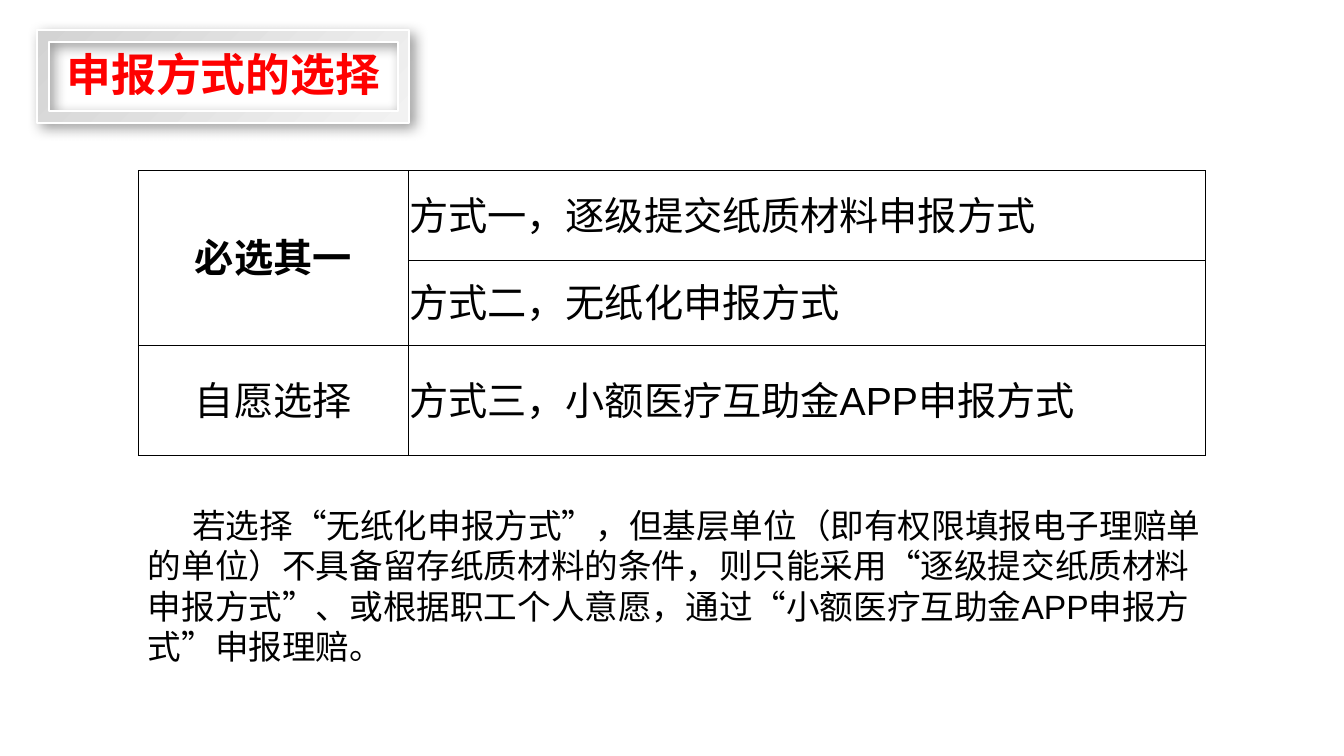
"""Build the slide on choosing a way to file a claim."""
from dataclasses import dataclass

from lxml.etree import SubElement
from pptx import Presentation
from pptx.dml.color import RGBColor
from pptx.enum.shapes import MSO_SHAPE as Shape
from pptx.enum.text import MSO_ANCHOR as Anchor, PP_ALIGN as Align
from pptx.oxml.ns import qn
from pptx.util import Pt

BLACK = RGBColor(0x00, 0x00, 0x00)
RED = RGBColor(0xFF, 0x00, 0x00)
WHITE = RGBColor(0xFF, 0xFF, 0xFF)
GREY = RGBColor(0xD3, 0xD3, 0xD3)
PALE = RGBColor(0xF2, 0xF2, 0xF2)
LATIN, CHINESE = "Arial", "Noto Sans CJK SC"
COLUMN_WIDTHS = (192.8, 569.6)
ROW_HEIGHTS = (64.2, 60.8, 78.8)
ADVICE = (
    "若选择“无纸化申报方式”，但基层单位（即有权限填报电子理赔单的单位）"
    "不具备留存纸质材料的条件，则只能采用“逐级提交纸质材料申报方式”、"
    "或根据职工个人意愿，通过“小额医疗互助金APP申报方式”申报理赔。"
)


@dataclass
class Entry:
    row: int
    column: int
    text: str
    bold: bool = False


ENTRIES = (
    Entry(0, 0, "必选其一", bold=True),
    Entry(0, 1, "方式一，逐级提交纸质材料申报方式"),
    Entry(1, 1, "方式二，无纸化申报方式"),
    Entry(2, 0, "自愿选择"),
    Entry(2, 1, "方式三，小额医疗互助金APP申报方式"),
)


def style(para, size: float, color: RGBColor = BLACK, bold: bool = False,
          latin: str = LATIN, align: Align = Align.LEFT) -> None:
    para.alignment = align
    font = para.font
    font.size, font.bold, font.name = Pt(size), bold, latin
    font.color.rgb = color
    SubElement(font._element, qn("a:ea"), typeface=CHINESE)


def add_frame(page) -> None:
    frame = page.shapes.add_shape(Shape.FRAME, Pt(26.6), Pt(21.6), Pt(265.7), Pt(66.2))
    frame.fill.gradient()
    frame.fill.gradient_angle = 315
    for stop, color in zip(frame.fill.gradient_stops, (GREY, PALE)):
        stop.color.rgb = color
    frame.line.color.rgb = WHITE
    frame.line.width = Pt(1.5)
    frame.shadow.inherit = False
    effects = frame._element.spPr.find(qn("a:effectLst"))
    shadow = SubElement(effects, qn("a:outerShdw"), blurRad=str(Pt(10)),
                        dist=str(Pt(4)), dir="2700000", algn="tl", rotWithShape="0")
    color = SubElement(shadow, qn("a:srgbClr"), val=str(BLACK))
    SubElement(color, qn("a:alpha"), val="40000")


def add_title(page) -> None:
    title = page.shapes.title
    title.left, title.top, title.width, title.height = Pt(40.3), Pt(29.5), Pt(239.8), Pt(46.1)
    title.text_frame.text = "申报方式的选择"
    title.text_frame.word_wrap = False
    title.text_frame.vertical_anchor = Anchor.MIDDLE
    style(title.text_frame.paragraphs[0], 32, RED, bold=True, latin=CHINESE)


def add_borders(cell) -> None:
    properties = cell._tc.get_or_add_tcPr()
    for index, side in enumerate(("lnL", "lnR", "lnT", "lnB")):
        line = properties.makeelement(qn(f"a:{side}"), {"w": str(Pt(0.5))})
        fill = SubElement(line, qn("a:solidFill"))
        SubElement(fill, qn("a:srgbClr"), val=str(BLACK))
        properties.insert(index, line)


def add_choices(page) -> None:
    table = page.shapes.add_table(
        len(ROW_HEIGHTS), len(COLUMN_WIDTHS), Pt(98.8), Pt(121.7),
        Pt(sum(COLUMN_WIDTHS)), Pt(sum(ROW_HEIGHTS))).table
    table.first_row = table.horz_banding = False
    for column, width in zip(table.columns, COLUMN_WIDTHS):
        column.width = Pt(width)
    for row, height in zip(table.rows, ROW_HEIGHTS):
        row.height = Pt(height)
    table.cell(0, 0).merge(table.cell(1, 0))
    for cell in table.iter_cells():
        cell.fill.background()
        cell.vertical_anchor = Anchor.MIDDLE
        cell.margin_left = cell.margin_right = cell.margin_top = Pt(0.7)
        cell.margin_bottom = Pt(3.6)
        add_borders(cell)
    for entry in ENTRIES:
        cell = table.cell(entry.row, entry.column)
        cell.text = entry.text
        style(cell.text_frame.paragraphs[0], 28, bold=entry.bold,
              latin=CHINESE if entry.column == 0 else LATIN,
              align=Align.CENTER if entry.column == 0 else Align.LEFT)


def add_advice(page) -> None:
    box = page.shapes.add_textbox(Pt(98.6), Pt(357.1), Pt(769), Pt(123.8))
    box.text_frame.word_wrap = True
    para = box.text_frame.paragraphs[0]
    para.text = ADVICE
    para._p.get_or_add_pPr().set("indent", str(Pt(31.7)))
    style(para, 24)


def main() -> None:
    deck = Presentation()
    deck.slide_width, deck.slide_height = Pt(960), Pt(540)
    page = deck.slides.add_slide(deck.slide_layouts[5])
    add_frame(page)
    add_title(page)
    add_choices(page)
    add_advice(page)
    deck.save("out.pptx")


if __name__ == "__main__":
    main()
